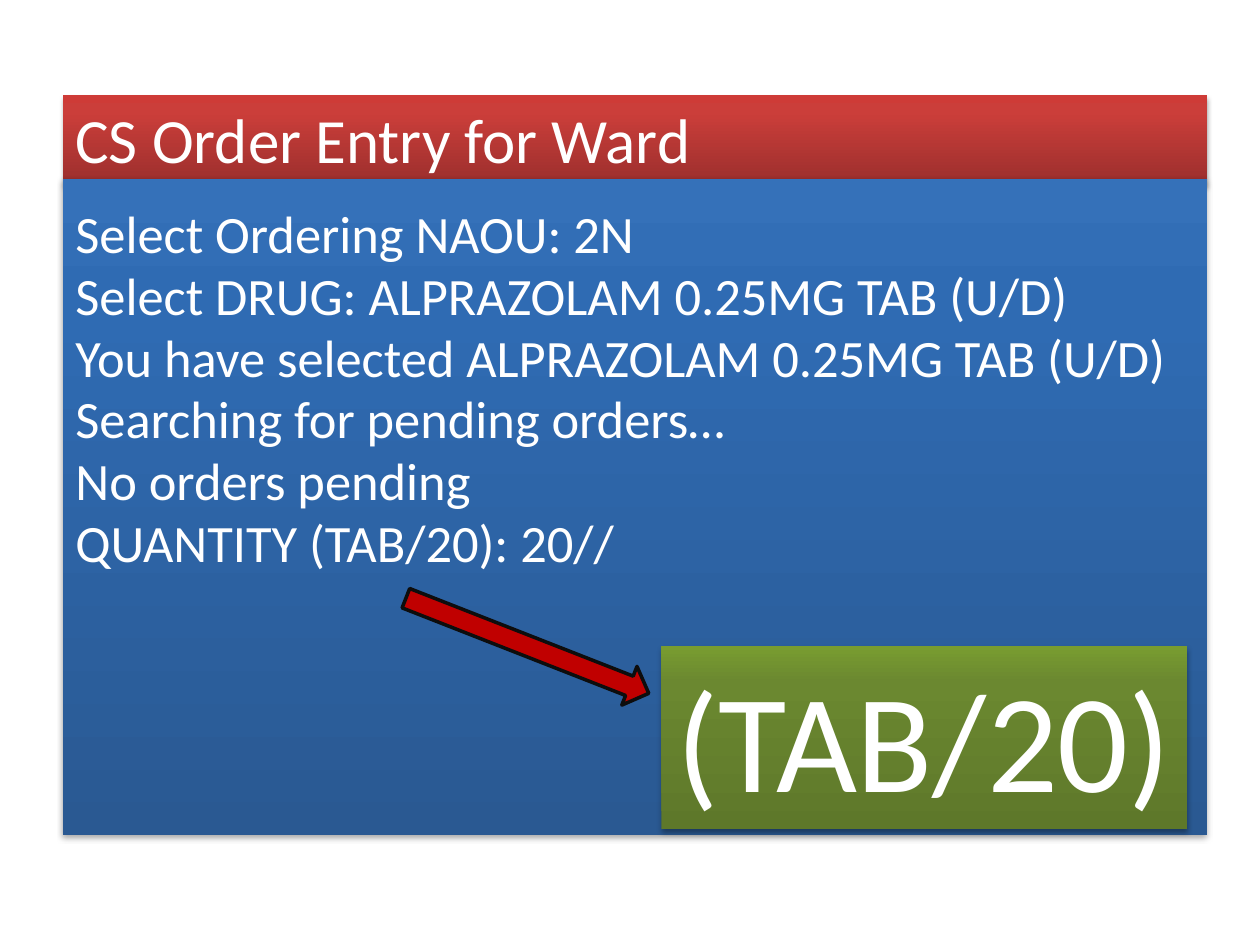
from lxml import etree
from pptx import Presentation
from pptx.dml.color import RGBColor
from pptx.enum import shapes, text
from pptx.oxml import ns, parse_xml
from pptx.util import Inches, Pt


def rgb(code):
    return RGBColor.from_string(code)


def panel(box, stops, lines, size, align=text.PP_ALIGN.LEFT, top=0.05):
    """Add a shaded, shadowed rectangle holding lines of white text."""
    rect = slide.shapes.add_shape(shapes.MSO_SHAPE.RECTANGLE, *map(Inches, box))
    rect.line.fill.background()
    rect.shadow.inherit = False

    # Three-stop gradient, running from bottom to top
    grad = "".join(
        f'<a:gs pos="{pos}"><a:srgbClr val="{code}"/></a:gs>'
        for pos, code in zip((0, 80000, 100000), stops))
    fill = parse_xml(f'<a:gradFill {ns.nsdecls("a")} rotWithShape="1"><a:gsLst>{grad}'
                     '</a:gsLst><a:lin ang="16200000" scaled="0"/></a:gradFill>')
    props = rect._element.spPr
    props.find(ns.qn("a:ln")).addprevious(fill)

    # Soft shadow below
    glow = etree.SubElement(props.find(ns.qn("a:effectLst")), ns.qn("a:outerShdw"),
                            blurRad=str(Pt(3.1)), dist=str(Pt(1.8)),
                            dir="5400000", rotWithShape="0")
    tint = etree.SubElement(glow, ns.qn("a:srgbClr"), val="000000")
    etree.SubElement(tint, ns.qn("a:alpha"), val="35000")

    frame = rect.text_frame
    frame.word_wrap = True
    frame.vertical_anchor = text.MSO_ANCHOR.TOP
    frame.margin_top = Inches(top)
    frame.text = "\n".join(lines)
    for para in frame.paragraphs:
        para.alignment = align
        para.font.name = "Calibri"
        para.font.size = Pt(size)
        para.font.color.rgb = rgb("FFFFFF")
    return frame


deck = Presentation()
deck.slide_width, deck.slide_height = Inches(10), Inches(7.5)
slide = deck.slides.add_slide(deck.slide_layouts[6])

# Title bar
panel((0.5, 0.75, 9.08, 0.71), ("9C2F2D", "CB3E3A", "CE3B37"),
      ["CS Order Entry for Ward"], 36)

# Order dialogue
body = panel((0.5, 1.42, 9.08, 5.21), ("2A5992", "2F6BB3", "3571B9"), [
    "Select Ordering NAOU: 2N",
    "Select DRUG: ALPRAZOLAM 0.25MG TAB (U/D)",
    "You have selected ALPRAZOLAM 0.25MG TAB (U/D)",
    "Searching for pending orders…",
    "No orders pending",
    "QUANTITY (TAB/20): 20//",
], 30, top=0.2)
for para in body.paragraphs:
    para.line_spacing = 0.98

# Arrow from the quantity to the callout
arrow = slide.shapes.add_shape(shapes.MSO_SHAPE.LEFT_ARROW, Inches(3.15), Inches(4.96),
                               Inches(2.07), Inches(0.33))
arrow.rotation = 201.4
arrow.shadow.inherit = False
arrow.fill.solid()
arrow.fill.fore_color.rgb = rgb("C00000")
arrow.line.color.rgb = rgb("0D0D0D")
arrow.line.width = Pt(2)

# Callout
panel((5.25, 5.13, 4.17, 1.45), ("5E782A", "6B8830", "789C30"),
      ["(TAB/20)"], 80, text.PP_ALIGN.CENTER)

deck.save("out.pptx")
